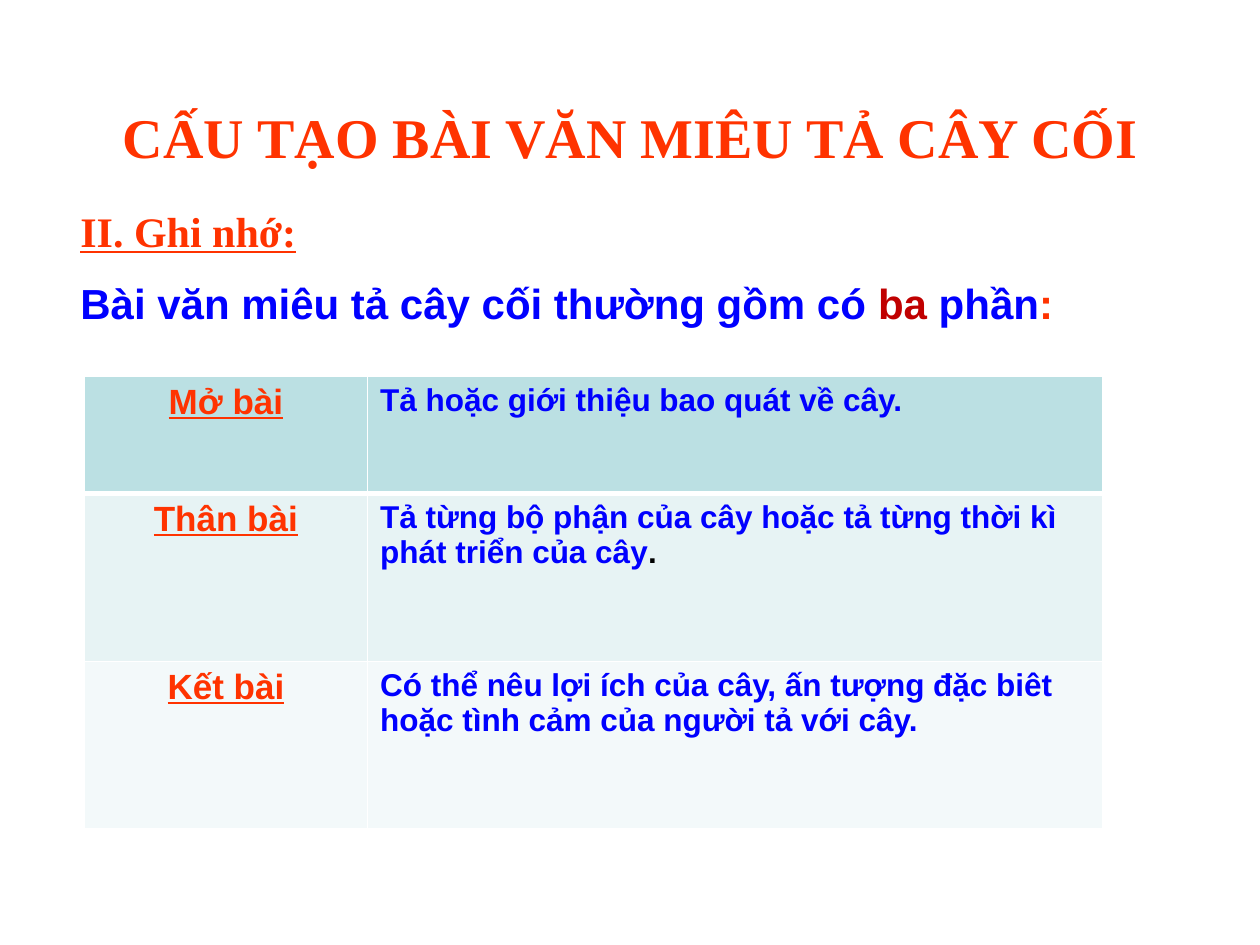
from lxml.etree import SubElement
from pptx import Presentation
from pptx.dml.color import RGBColor
from pptx.enum.text import MSO_ANCHOR, PP_ALIGN
from pptx.oxml.ns import qn
from pptx.util import Cm, Pt

COLORS = {
    "red": "FF3300", "blue": "0000FF", "dark_red": "C00000", "black": "000000",
    "white": "FFFFFF", "header": "BBE0E3", "band1": "E7F3F4", "band2": "F3F9FA",
}


def add_runs(p, runs, size, font="Arial", underline=False):
    for text, color in runs:
        r = p.add_run()
        r.text = text
        formats = {"size": Pt(size), "name": font, "bold": True, "underline": underline}
        for name, value in formats.items():
            setattr(r.font, name, value)
        r.font.color.rgb = RGBColor.from_string(COLORS[color])


def add_border(cell, side, width):
    ln = SubElement(cell._tc.get_or_add_tcPr(), qn(f"a:ln{side}"), w=str(Pt(width)))
    fill = SubElement(ln, qn("a:solidFill"))
    SubElement(fill, qn("a:srgbClr"), val=COLORS["white"])


prs = Presentation()
prs.slide_width, prs.slide_height = Cm(25.4), Cm(19.05)
s = prs.slides.add_slide(prs.slide_layouts[5])

title = s.shapes.title
placement = {"left": Cm(1.7), "top": Cm(-0.05), "width": Cm(22.02), "height": Cm(3.68)}
for name, value in placement.items():
    setattr(title, name, value)
tf = title.text_frame
tf.vertical_anchor = MSO_ANCHOR.BOTTOM
tf.margin_bottom = Cm(0.2)
p = tf.paragraphs[0]
p.alignment = PP_ALIGN.CENTER
add_runs(p, [("CẤU TẠO BÀI VĂN MIÊU TẢ CÂY CỐI", "red")], 32, "Times New Roman")

intro = [
    ("Bài văn miêu tả cây cối thường gồm có ", "blue"),
    ("ba ", "dark_red"), ("phần", "blue"), (":", "red"),
]
text_boxes = [
    (4.01, 5.28, 1.27, [("II. Ghi nhớ:", "red")], "Times New Roman", True),
    (5.46, 24.82, 2.31, intro, "Arial", False),
]
for top, width, height, runs, font, underline in text_boxes:
    sp = s.shapes.add_textbox(Cm(1.37), Cm(top), Cm(width), Cm(height))
    tf = sp.text_frame
    tf.word_wrap = True
    add_runs(tf.paragraphs[0], runs, 24, font, underline)

rows = [
    ("Mở bài", [("Tả hoặc giới thiệu bao quát về cây.", "blue")], 2.36, "header"),
    ("Thân bài", [
        ("Tả từng bộ phận của cây hoặc tả từng thời kì phát triển của cây", "blue"),
        (".", "black"),
    ], 3.38, "band1"),
    ("Kết bài", [
        ("Có thể nêu lợi ích của cây, ấn tượng đặc biêt hoặc tình cảm của người tả với cây.", "blue"),
    ], 3.38, "band2"),
]
table = s.shapes.add_table(3, 2, Cm(1.7), Cm(7.59), Cm(20.54), Cm(9.12)).table
for column, width in zip(table.columns, (5.71, 14.83)):
    column.width = Cm(width)
for i, (part, description, height, fill) in enumerate(rows):
    table.rows[i].height = Cm(height)
    borders = {"L": 1, "R": 1, "T": 3 if i == 1 else 1, "B": 3 if i == 0 else 1}
    for cell in table.rows[i].cells:
        for side, width in borders.items():
            add_border(cell, side, width)
        cell.fill.solid()
        cell.fill.fore_color.rgb = RGBColor.from_string(COLORS[fill])
    p = table.cell(i, 0).text_frame.paragraphs[0]
    p.alignment = PP_ALIGN.CENTER
    add_runs(p, [(part, "red")], 20, underline=True)
    add_runs(table.cell(i, 1).text_frame.paragraphs[0], description, 18)

prs.save("out.pptx")
